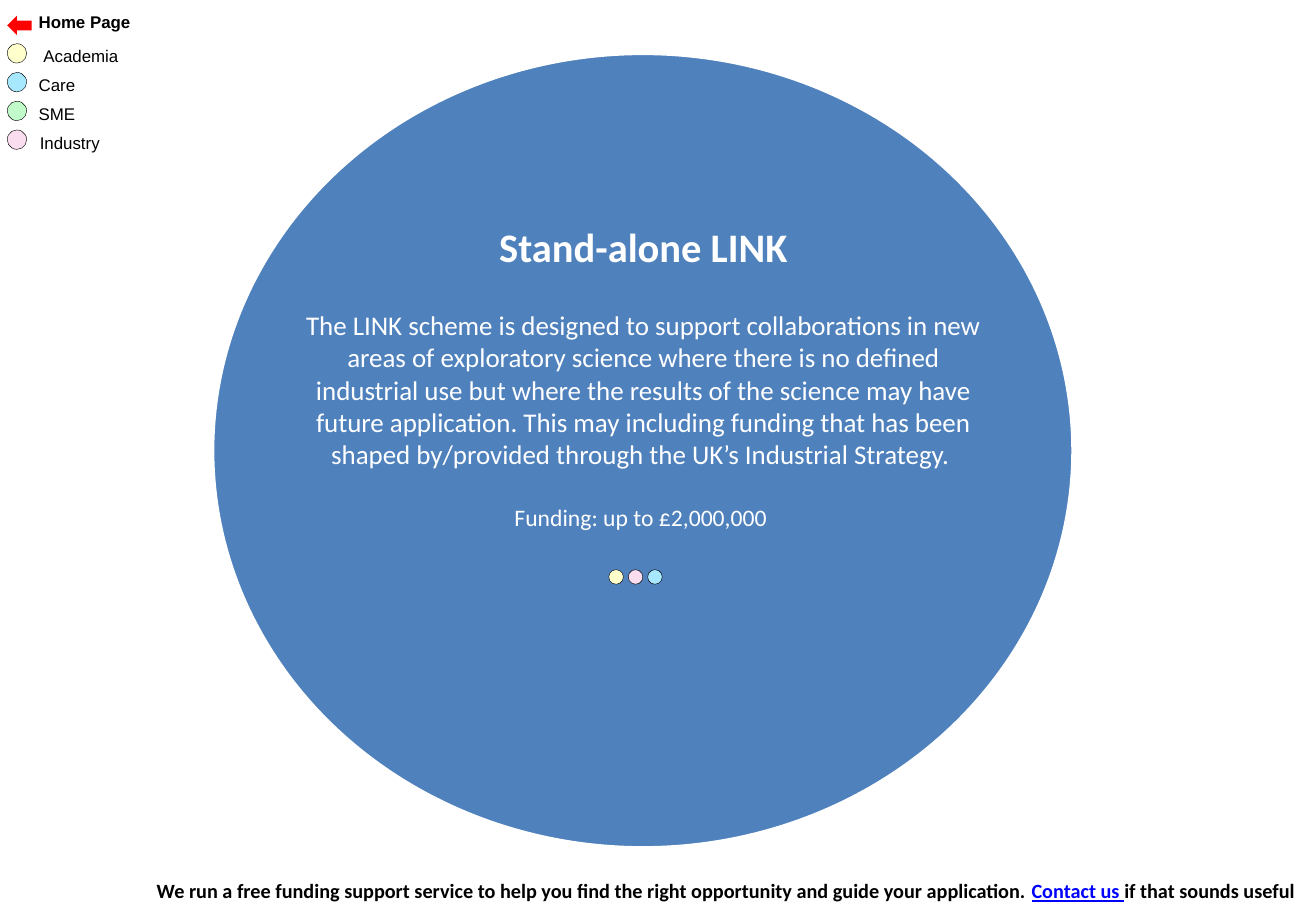
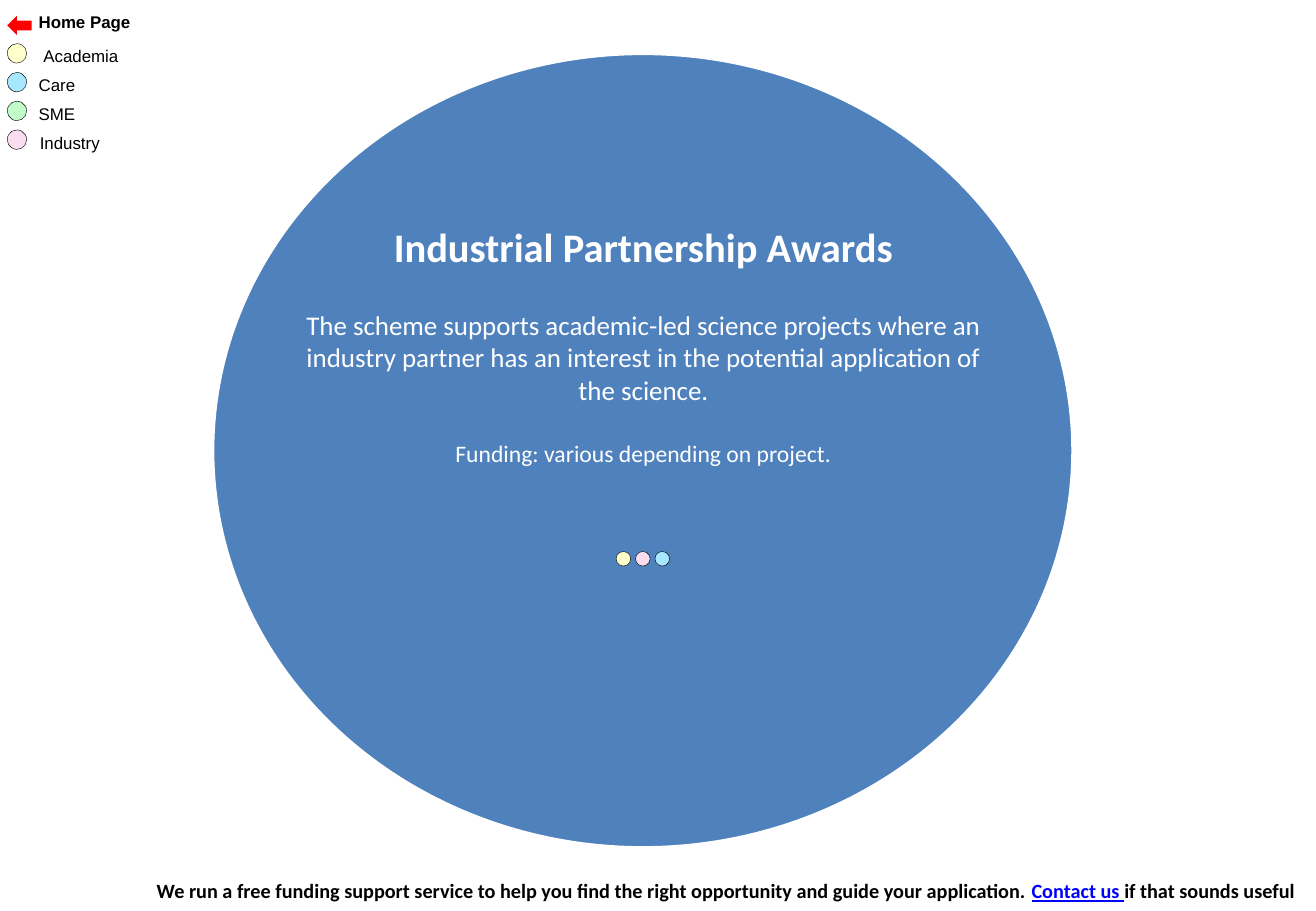
from pptx import Presentation
from pptx import util as u
from pptx.dml.color import RGBColor
from pptx.enum import shapes, text

COLORS = {
    "black": "000000", "white": "FFFFFF", "link": "0000FF",
    "arrow": "FF0000", "disc": "4F81BD",
    "Academia": "FFFFCC", "Care": "A7E8FF", "SME": "C1FBC9", "Industry": "FBDDF0",
}
LABEL_INDENT = {"Academia": 0.2, "Care": 0.16, "SME": 0.16, "Industry": 0.17}
LEGEND_STEP = 0.71 / 3
LEGEND_DOT, SECTOR_DOT, SECTOR_STEP = 0.16, 0.12, 0.16
SECTORS = ("Academia", "Industry", "Care")
SHAPE = shapes.MSO_SHAPE
CENTER = text.PP_ALIGN.CENTER


def rgb(name):
    return RGBColor.from_string(COLORS[name])


def inches(*box):
    return [u.Inches(v) for v in box]


def add_figure(s, kind, box, fill, line=None, width=0.25):
    sp = s.shapes.add_shape(kind, *inches(*box))
    sp.shadow.inherit = False
    sp.fill.solid()
    sp.fill.fore_color.rgb = rgb(fill)
    if line:
        sp.line.color.rgb = rgb(line)
        sp.line.width = u.Pt(width)
    else:
        sp.line.fill.background()
    return sp


def add_run(p, words, size, color="black", font="Calibri", bold=False, underline=False):
    r = p.add_run()
    r.text = words
    r.font.name, r.font.size = font, u.Pt(size)
    r.font.bold, r.font.underline = bold, underline
    r.font.color.rgb = rgb(color)


def set_frame(tf, side=0.11):
    tf.word_wrap = True
    tf.auto_size = text.MSO_AUTO_SIZE.NONE
    tf.vertical_anchor = text.MSO_ANCHOR.TOP
    tf.margin_left = tf.margin_right = u.Inches(side)
    tf.margin_top = tf.margin_bottom = u.Inches(0.05)
    return tf


def add_text(s, box, side=0.11):
    return set_frame(s.shapes.add_textbox(*inches(*box)).text_frame, side)


def add_legend(s, left, top):
    tf = add_text(s, (left + 0.16, top, 1.1, 0.27), 0.1)
    add_run(tf.paragraphs[0], "Home Page", 10, font="Arial", bold=True)
    add_figure(s, SHAPE.LEFT_ARROW, (left, top + 0.08, 0.2, 0.16), "arrow")
    for i, (name, indent) in enumerate(LABEL_INDENT.items()):
        y = top + 0.31 + i * LEGEND_STEP
        add_figure(s, SHAPE.OVAL, (left, y, LEGEND_DOT, LEGEND_DOT), name, "black")
        tf = add_text(s, (left + indent, y - 0.03, 1, 0.27), 0.1)
        add_run(tf.paragraphs[0], name, 10, font="Arial")


def add_footer(s, box):
    p = add_text(s, box).paragraphs[0]
    add_run(p, "We run a free funding support service to help you find the right "
               "opportunity and guide your application. ", 12, bold=True)
    add_run(p, "Contact us ", 12, "link", bold=True, underline=True)
    add_run(p, "if that sounds useful", 12, bold=True)


def add_scheme(s, box, title, summary, funding, dots):
    left, top, width, height = box
    add_figure(s, SHAPE.OVAL, box, "disc", "white", 2)

    sp = s.shapes.title
    s.shapes._spTree.append(sp._element)
    sp.left, sp.top, sp.width, sp.height = inches(left + 0.6, top + 1.34, 5.89, 0.51)
    p = set_frame(sp.text_frame).paragraphs[0]
    p.alignment = CENTER
    add_run(p, title, 24, "white", bold=True)

    tf = add_text(s, (left + 0.6, top + 2.05, 5.89, 1.96))
    p = tf.paragraphs[0]
    p.alignment = CENTER
    add_run(p, summary, 16, "white")
    p = tf.add_paragraph()
    p.alignment = CENTER
    p.space_before = u.Pt(19.5)
    add_run(p, funding, 14, "white")

    dx, dy = dots
    for i, name in enumerate(SECTORS):
        add_figure(s, SHAPE.OVAL, (left + dx + i * SECTOR_STEP, top + dy, SECTOR_DOT, SECTOR_DOT),
                   name, "black")


def add_scheme_slide(prs, **scheme):
    s = prs.slides.add_slide(prs.slide_layouts[5])
    add_footer(s, (1.18, 7.18, 9.65, 0.31))
    add_legend(s, 0.06, 0.05)
    add_scheme(s, (1.75, 0.44, 7.08, 6.54), **scheme)


def main():
    prs = Presentation()
    prs.slide_width, prs.slide_height = inches(10.83, 7.5)
    add_scheme_slide(
        prs,
        title="Stand-alone LINK",
        summary="The LINK scheme is designed to support collaborations in new areas of "
                "exploratory science where there is no defined industrial use but where the "
                "results of the science may have future application. This may including "
                "funding that has been shaped by/provided through the UK’s Industrial Strategy. ",
        funding="Funding: up to £2,000,000 ",
        dots=(3.26, 4.25),
    )
    add_scheme_slide(
        prs,
        title="Industrial Partnership Awards",
        summary="The scheme supports academic-led science projects where an industry partner "
                "has an interest in the potential application of the science.",
        funding="Funding: various depending on project.",
        dots=(3.32, 4.1),
    )
    prs.save("out.pptx")


if __name__ == "__main__":
    main()
